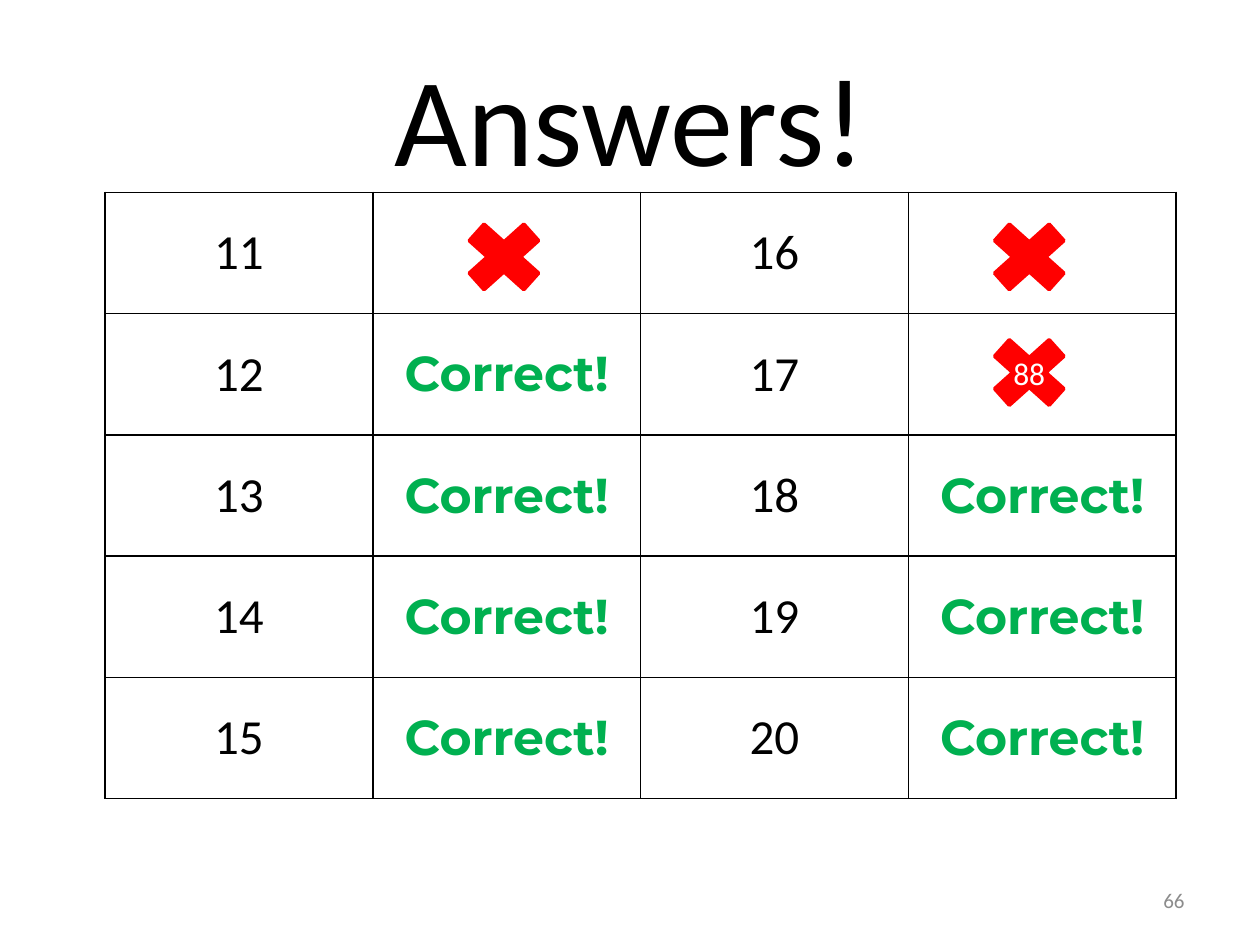
from dataclasses import dataclass

from lxml import etree
from pptx import Presentation
from pptx.dml.color import RGBColor
from pptx.enum.shapes import MSO_SHAPE
from pptx.enum.text import MSO_ANCHOR, PP_ALIGN
from pptx.oxml.ns import qn
from pptx.util import Cm, Pt

BLACK = RGBColor(0x00, 0x00, 0x00)
WHITE = RGBColor(0xFF, 0xFF, 0xFF)
GRAY = RGBColor(0x8C, 0x8C, 0x8C)
GREEN = RGBColor(0x00, 0xB0, 0x50)
RED = RGBColor(0xFF, 0x00, 0x00)
CROSS = MSO_SHAPE.MATH_MULTIPLY
CENTER, RIGHT = PP_ALIGN.CENTER, PP_ALIGN.RIGHT
MIDDLE = MSO_ANCHOR.MIDDLE

ROWS, COLS = 5, 4
FIRST = 11
WRONG = {11, 16, 17}


@dataclass
class Style:
    size: int
    color: RGBColor
    font: str = "Calibri"
    bold: bool = False
    align: PP_ALIGN = CENTER


@dataclass
class Label:
    text: str
    left: float
    top: float
    width: float
    height: float
    style: Style


@dataclass
class Mark:
    left: float
    top: float
    text: str = ""


NUMBER = Style(28, BLACK)
RIGHT_ANSWER = Style(28, GREEN, "Montserrat", True)
MARK_TEXT = Style(18, WHITE)

LABELS = [
    Label("Answers!", 1.27, 0.76, 22.86, 3.18, Style(72, BLACK)),
    Label("66", 18.2, 17.65, 5.93, 1.01, Style(12, GRAY, align=RIGHT)),
]
MARKS = [Mark(9.1, 4.23), Mark(19.69, 4.23), Mark(19.69, 6.56, "88")]


def write(frame, text: str, style: Style) -> None:
    para = frame.paragraphs[0]
    para.alignment = style.align
    run = para.add_run()
    run.text = text
    font = run.font
    font.name, font.size, font.bold = style.font, Pt(style.size), style.bold
    font.color.rgb = style.color


def add_label(slide, label: Label) -> None:
    box = slide.shapes.add_textbox(Cm(label.left), Cm(label.top),
                                   Cm(label.width), Cm(label.height))
    frame = box.text_frame
    frame.word_wrap = True
    frame.vertical_anchor = MIDDLE
    write(frame, label.text, label.style)


def add_border(cell) -> None:
    props = cell._tc.get_or_add_tcPr()
    for at, side in enumerate(("lnL", "lnR", "lnT", "lnB")):
        line = etree.Element(qn(f"a:{side}"), w=str(Pt(1)))
        fill = etree.SubElement(line, qn("a:solidFill"))
        etree.SubElement(fill, qn("a:srgbClr"), val=str(BLACK))
        props.insert(at, line)


def add_grid(slide) -> None:
    table = slide.shapes.add_table(ROWS, COLS, Cm(2.12), Cm(3.88),
                                   Cm(21.59), Cm(12.22)).table
    table.first_row = table.horz_banding = False
    for row in range(ROWS):
        for col in range(COLS):
            cell = table.cell(row, col)
            cell.fill.background()
            cell.vertical_anchor = MIDDLE
            add_border(cell)
            # Each pair of columns holds a question number and its result
            number = FIRST + row + col // 2 * ROWS
            if col % 2 == 0:
                write(cell.text_frame, str(number), NUMBER)
            elif number not in WRONG:
                write(cell.text_frame, "Correct!", RIGHT_ANSWER)


def add_mark(slide, mark: Mark) -> None:
    shape = slide.shapes.add_shape(CROSS, Cm(mark.left), Cm(mark.top),
                                   Cm(2.12), Cm(1.9))
    shape.shadow.inherit = False
    shape.fill.solid()
    shape.fill.fore_color.rgb = RED
    shape.line.color.rgb = RED
    shape.line.width = Pt(2)
    if mark.text:
        shape.text_frame.vertical_anchor = MIDDLE
        write(shape.text_frame, mark.text, MARK_TEXT)


def main() -> None:
    deck = Presentation()
    deck.slide_width, deck.slide_height = Cm(25.4), Cm(19.05)
    slide = deck.slides.add_slide(deck.slide_layouts[6])

    # Title and page number
    for label in LABELS:
        add_label(slide, label)

    # Answer grid
    add_grid(slide)

    # Crosses on the wrong answers
    for mark in MARKS:
        add_mark(slide, mark)

    deck.save("out.pptx")


if __name__ == "__main__":
    main()
